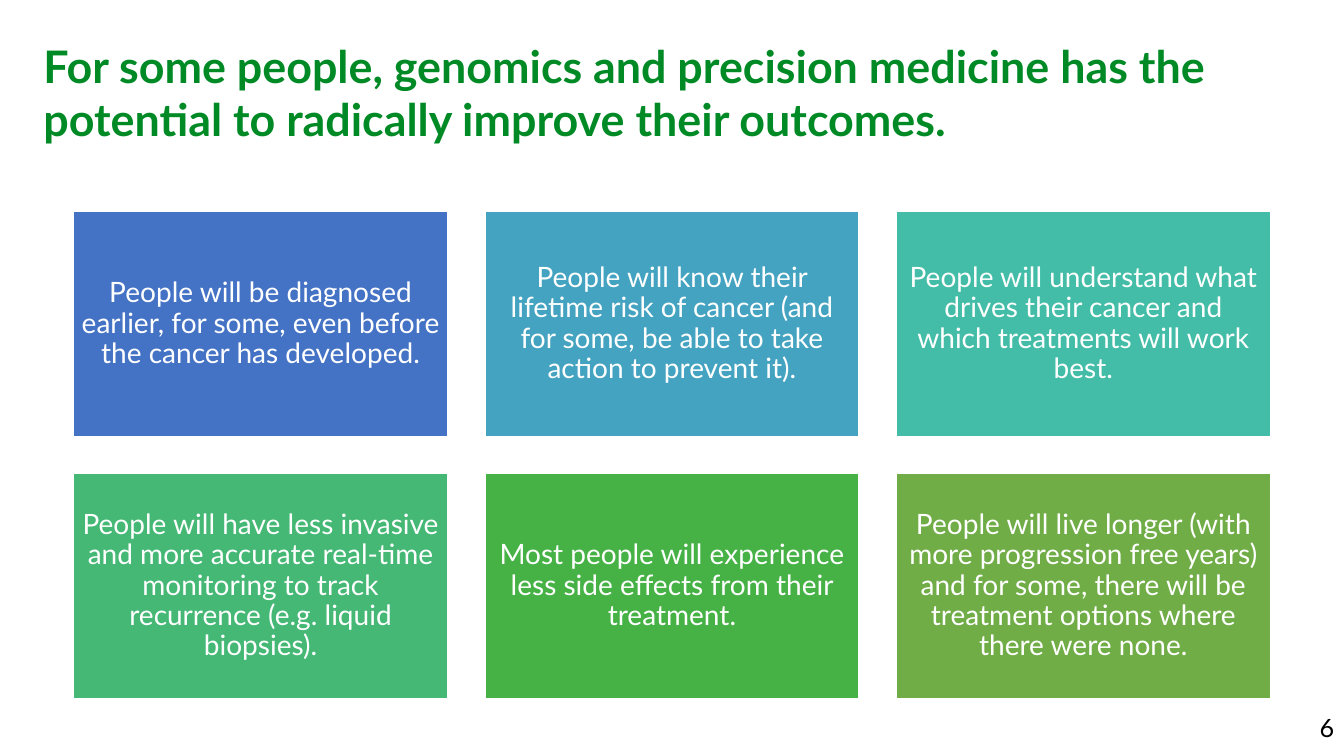
"""Build a slide of six ways genomics and precision medicine improve outcomes."""
from pptx import Presentation
from pptx.dml.color import RGBColor
from pptx.enum.shapes import MSO_SHAPE
from pptx.enum.text import MSO_ANCHOR, PP_ALIGN
from pptx.util import Inches, Pt

FONT = "Lato"
WHITE = RGBColor(0xFF, 0xFF, 0xFF)
BLACK = RGBColor(0x00, 0x00, 0x00)
TITLE_GREEN = RGBColor(0x00, 0x8A, 0x26)

COLUMNS = 3
GRID_LEFT, GRID_TOP = 0.73, 2.1
CARD_WIDTH, CARD_HEIGHT = 3.71, 2.23
GAP = 0.37

TITLE = ("For some people, genomics and precision medicine has the "
         "potential to radically improve their outcomes.")
OUTCOMES = [
    ("People will be diagnosed earlier, for some, even before the cancer "
     "has developed.", RGBColor(0x44, 0x72, 0xC4)),
    ("People will know their lifetime risk of cancer (and for some, be able "
     "to take action to prevent it).", RGBColor(0x44, 0xA3, 0xC0)),
    ("People will understand what drives their cancer and which treatments "
     "will work best.", RGBColor(0x43, 0xBD, 0xA7)),
    ("People will have less invasive and more accurate real-time monitoring "
     "to track recurrence (e.g. liquid biopsies).", RGBColor(0x44, 0xB8, 0x74)),
    ("Most people will experience less side effects from their treatment.",
     RGBColor(0x46, 0xB2, 0x46)),
    ("People will live longer (with more progression free years) and for "
     "some, there will be treatment options where there were none.",
     RGBColor(0x70, 0xAD, 0x47)),
]


def write(holder, words, size, color, align, inset, bold=False):
    """Put one formatted paragraph into a shape and return its text frame."""
    frame = holder.text_frame
    frame.word_wrap = True
    frame.margin_left = frame.margin_right = Inches(inset)
    frame.margin_top = frame.margin_bottom = Inches(min(inset, 0.08))
    frame.text = words
    paragraph = frame.paragraphs[0]
    paragraph.alignment = align
    font = paragraph.runs[0].font
    font.name, font.size, font.bold = FONT, Pt(size), bold
    font.color.rgb = color
    return frame


def add_title(slide):
    """Add the headline."""
    title = slide.shapes.add_textbox(
        Inches(0.43), Inches(0.38), Inches(12.66), Inches(1.08))
    write(title, TITLE, 32, TITLE_GREEN, PP_ALIGN.LEFT, 0, bold=True)


def add_outcome(slide, index, words, color):
    """Add one outcome card at its place in the grid."""
    row, column = divmod(index, COLUMNS)
    card = slide.shapes.add_shape(
        MSO_SHAPE.RECTANGLE,
        Inches(GRID_LEFT + column * (CARD_WIDTH + GAP)),
        Inches(GRID_TOP + row * (CARD_HEIGHT + GAP)),
        Inches(CARD_WIDTH), Inches(CARD_HEIGHT))
    card.shadow.inherit = False
    card.fill.solid()
    card.fill.fore_color.rgb = color
    card.line.color.rgb = WHITE
    card.line.width = Pt(1)
    frame = write(card, words, 20, WHITE, PP_ALIGN.CENTER, 0.08)
    frame.vertical_anchor = MSO_ANCHOR.MIDDLE
    frame.paragraphs[0].line_spacing = 0.9


def add_page_number(slide):
    """Add the page number at the lower right."""
    number = slide.shapes.add_textbox(
        Inches(10.95), Inches(7.02), Inches(2.38), Inches(0.32))
    frame = write(number, "6", 18, BLACK, PP_ALIGN.RIGHT, 0.1)
    frame.margin_top = frame.margin_bottom = Inches(0.05)


def main():
    """Assemble and save the slide."""
    deck = Presentation()
    deck.slide_width, deck.slide_height = Inches(13.33), Inches(7.5)
    slide = deck.slides.add_slide(deck.slide_layouts[6])
    add_title(slide)
    for index, (words, color) in enumerate(OUTCOMES):
        add_outcome(slide, index, words, color)
    add_page_number(slide)
    deck.save("out.pptx")


if __name__ == "__main__":
    main()
